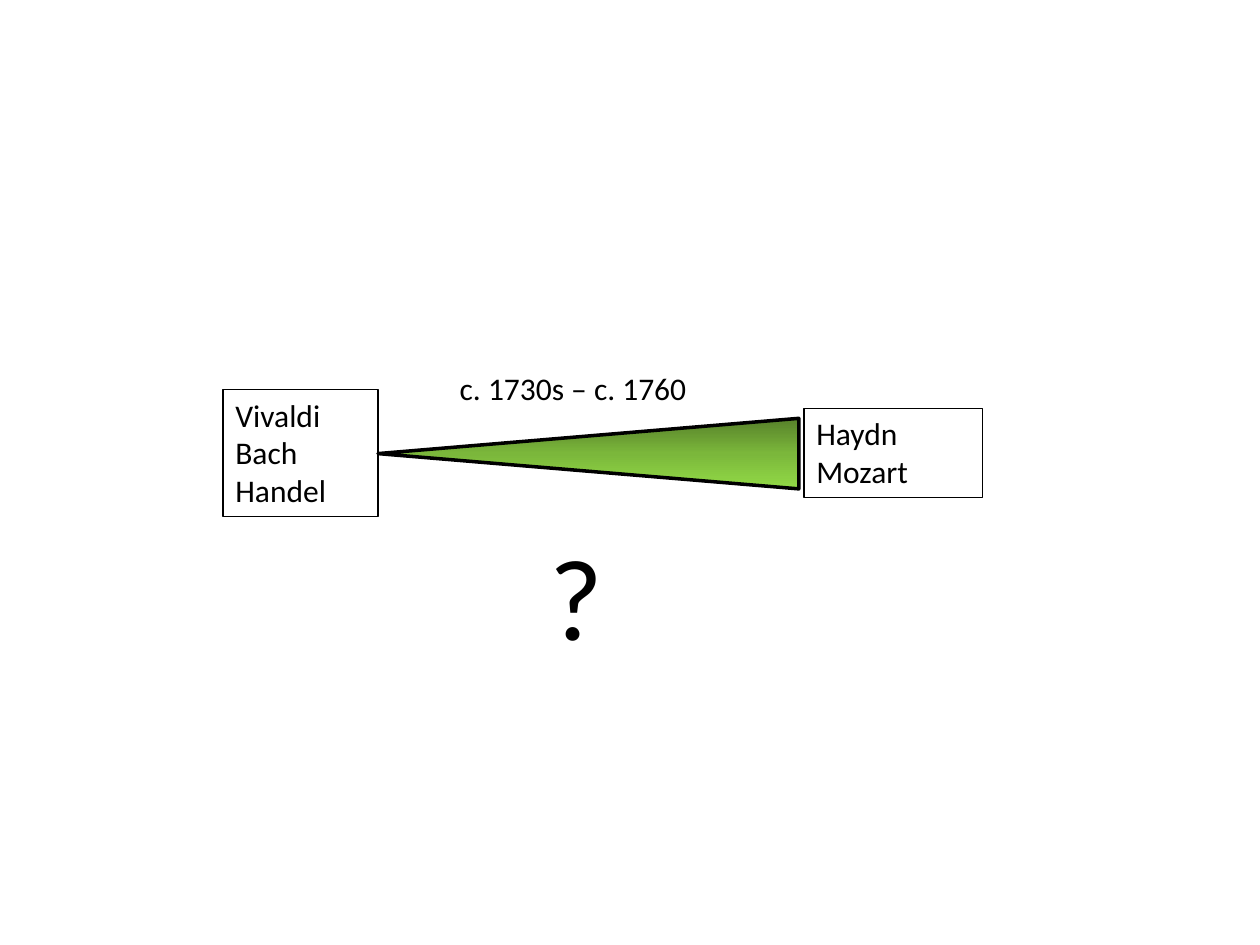
from lxml.etree import SubElement
from pptx import Presentation
from pptx.dml.color import RGBColor
from pptx.enum.shapes import MSO_SHAPE
from pptx.enum.text import MSO_AUTO_SIZE
from pptx.oxml.ns import qn
from pptx.util import Inches, Pt

INK = "000000"


def color(code):
    """Turn a hex string into a colour."""
    return RGBColor.from_string(code)


def outline(shape, width):
    """Draw a solid ink line round a shape."""
    shape.line.color.rgb = color(INK)
    shape.line.width = Pt(width)


def add_text(slide, area, lines, size=18):
    """Add a text box with one paragraph per line."""
    box = slide.shapes.add_textbox(*map(Inches, area))
    frame = box.text_frame
    frame.word_wrap = True
    frame.auto_size = MSO_AUTO_SIZE.SHAPE_TO_FIT_TEXT
    frame.text = "\n".join(lines)
    for para in frame.paragraphs:
        for run in para.runs:
            run.font.name = "Calibri"
            run.font.size = Pt(size)
            run.font.color.rgb = color(INK)
    return box


def add_names(slide, area, names):
    """Add an outlined list of composers."""
    outline(add_text(slide, area, names), 0.75)


def add_wedge(slide, area, stops):
    """Add a triangle pointing left with a gradient fill."""
    wedge = slide.shapes.add_shape(
        MSO_SHAPE.FLOWCHART_EXTRACT, *map(Inches, area))
    wedge.rotation = 270
    wedge.shadow.inherit = False
    wedge.fill.gradient()
    wedge.fill.gradient_angle = 180
    ramp = next(wedge._element.iter(qn("a:gsLst")))
    for old in list(ramp):
        ramp.remove(old)
    for spot, code in stops:
        stop = SubElement(ramp, qn("a:gs"), pos=str(spot * 1000))
        SubElement(stop, qn("a:srgbClr"), val=code)
    outline(wedge, 2)


def main():
    """Build the slide and save it."""
    deck = Presentation()
    deck.slide_width, deck.slide_height = Inches(10), Inches(7.5)
    slide = deck.slides.add_slide(deck.slide_layouts[6])
    add_names(slide, (1.77, 3.09, 1.23, 1.01), ["Vivaldi", "Bach", "Handel"])
    add_names(slide, (6.38, 3.24, 1.42, 0.71), ["Haydn", "Mozart"])
    add_wedge(slide, (4.39, 1.93, 0.56, 3.34),
              [(0, "57812A"), (50, "7BB73B"), (100, "92DA46")])
    add_text(slide, (4.26, 4.12, 0.42, 1.21), ["?"], 66)
    add_text(slide, (3.55, 2.88, 2.25, 0.4), ["c. 1730s – c. 1760"])
    deck.save("out.pptx")


if __name__ == "__main__":
    main()
